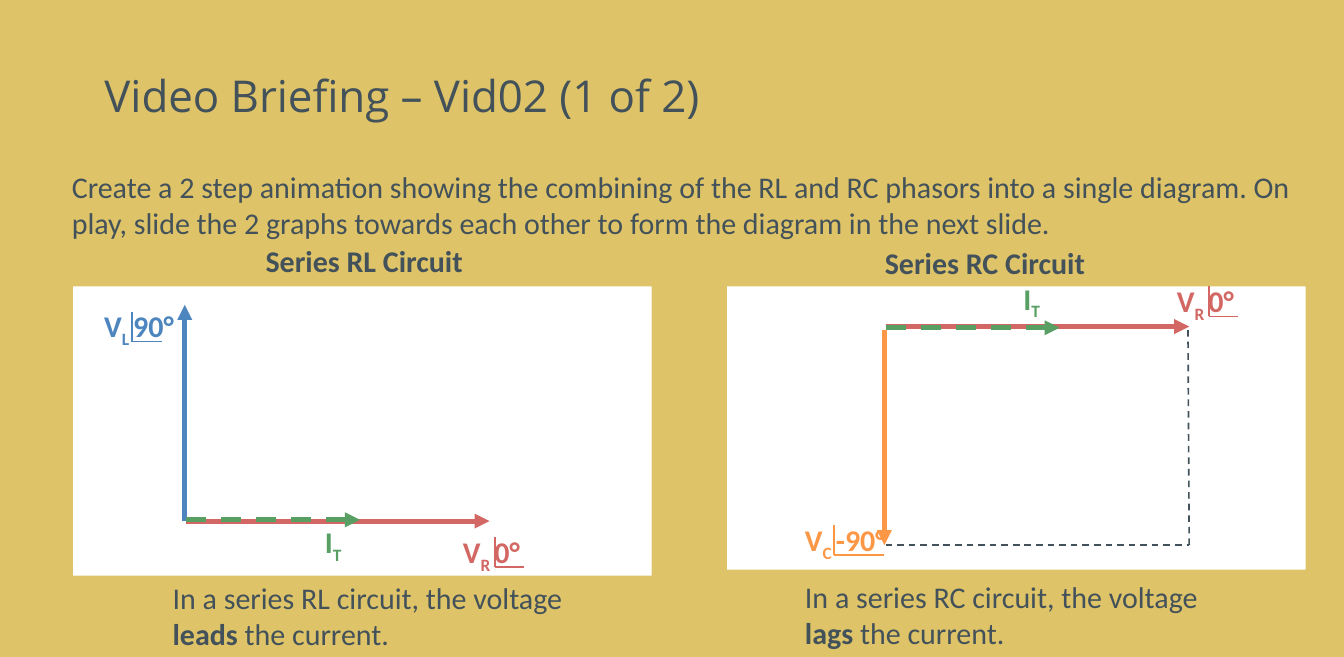
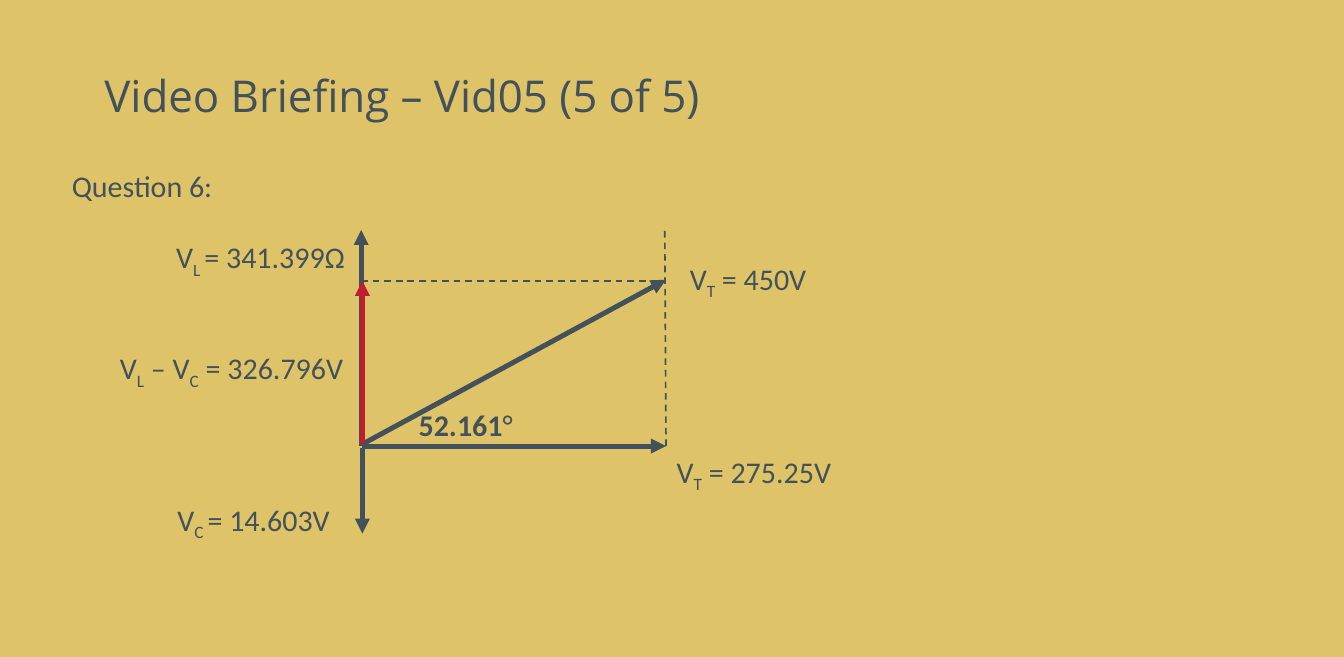
import pptx
import pptx.util
import pptx.dml.color
import pptx.enum.dml
import pptx.enum.shapes
import pptx.enum.text
import pptx.oxml
import pptx.oxml.ns

HUES = {
    "back": "DEC368", "ink": "43525A", "paper": "FFFFFF", "blue": "4D85BE",
    "red": "D26764", "green": "589F64", "orange": "FC9746", "crimson": "BE1E2D",
}
COLS, ROWS = 112, 54.72  # square cells of a tenth of an inch
TALL = 4  # rows taken by one line of text
BODY = "Calibri"
HEAD = "Open Sans"


def cell(n):
    """Length of n grid cells."""
    return pptx.util.Inches(n / 10)


def hue(name):
    return pptx.dml.color.RGBColor.from_string(HUES[name])


def tag(parent, name, **attrs):
    node = pptx.oxml.parse_xml(f"<a:{name} {pptx.oxml.ns.nsdecls('a')}/>")
    for key, val in attrs.items():
        node.set(key, val)
    parent.append(node)


class Pad:
    """A region of a slide; places are grid cells from its left top corner."""

    def __init__(self, slide, left, top):
        self.shapes, self.left, self.top = slide.shapes, left, top

    def spot(self, x, y):
        return cell(self.left + x), cell(self.top + y)

    def line(self, start, end, color="ink", size=1, dash=False, head=False):
        link = self.shapes.add_connector(
            pptx.enum.shapes.MSO_CONNECTOR.STRAIGHT,
            *self.spot(*start), *self.spot(*end))
        link.line.color.rgb = hue(color)
        link.line.width = pptx.util.Pt(size)
        if dash:
            link.line.dash_style = pptx.enum.dml.MSO_LINE.DASH
        if head:
            tag(link.line._get_or_add_ln(), "tailEnd", type="triangle")
        tag(link._element.spPr, "effectLst")

    def arrow(self, start, end, color="ink", dash=False):
        self.line(start, end, color, 3, dash, True)

    def text(self, x, y, wide, runs, color="ink", tall=TALL, wrap=False):
        """Runs are (words, style): b is bold, s is subscript."""
        frame = self.shapes.add_textbox(
            *self.spot(x, y), cell(wide), cell(tall)).text_frame
        frame.word_wrap = wrap
        frame.auto_size = pptx.enum.text.MSO_AUTO_SIZE.SHAPE_TO_FIT_TEXT
        for words, style in runs:
            run = frame.paragraphs[0].add_run()
            run.text = words
            run.font.name = BODY
            run.font.size = pptx.util.Pt(18)
            run.font.bold = "b" in style
            run.font.color.rgb = hue(color)
            if "s" in style:
                run._r.get_or_add_rPr().set("baseline", "-25000")

    def angle(self, x, y, wide, sub, turn, color, mark):
        """Polar label: mark is the offset and length of its angle sign."""
        self.text(x, y, wide,
                  [("V", "b"), (sub + " ", "bs"), (turn, "b")], color)
        left, size = x + mark[0], mark[1]
        top, low = y + 0.8, y + 3.3
        self.line((left, top), (left, low), color)
        self.line((left, low), (left + size, low), color)


def page(deck, title, lead, tall=TALL):
    slide = deck.slides.add_slide(deck.slide_layouts[5])
    box = slide.shapes.title
    box.left, box.top = cell(7.7), cell(2.9)
    box.width, box.height = cell(96.6), cell(10.6)
    frame = box.text_frame
    frame.auto_size = pptx.enum.text.MSO_AUTO_SIZE.NONE
    frame.vertical_anchor = pptx.enum.text.MSO_ANCHOR.MIDDLE
    para = frame.paragraphs[0]
    para.alignment = pptx.enum.text.PP_ALIGN.LEFT
    para.line_spacing = 0.9
    run = para.add_run()
    run.text = title
    run.font.name = HEAD
    run.font.size = pptx.util.Pt(26.3)
    run.font.color.rgb = hue("ink")
    Pad(slide, 0, 0).text(5, 13.5, 105.5, [(lead, "")], tall=tall, wrap=True)
    return slide


def panel(slide, box, zero, rise, gap, lean, color, volt, drop, amp,
          frame=False):
    """Phasor graph in a white box, with its axes crossing at zero.

    The voltage starts gap below zero, the current runs lean below it.
    """
    pad = Pad(slide, *box[:2])
    card = slide.shapes.add_shape(
        pptx.enum.shapes.MSO_SHAPE.RECTANGLE,
        *pad.spot(0, 0), cell(box[2]), cell(box[3]))
    card.shadow.inherit = False
    card.fill.solid()
    card.fill.fore_color.rgb = hue("paper")
    card.line.fill.background()
    x, y = zero
    far, tip = x + 25.3, y + rise
    pad.arrow((x - 0.1, y + gap), (x - 0.1, tip), color)
    pad.arrow((x, y), (far, y), "red")
    if frame:
        pad.line((x, tip), (far, tip), dash=True)
        pad.line((far, tip), (far - 0.1, y + gap), dash=True)
    pad.angle(*volt[:5], color, volt[5])
    pad.angle(*drop, 7, "R", "0°", "red", (3.65, 2.4))
    pad.arrow((x, y + lean), (x + 14.5, y + lean), "green", True)
    pad.text(*amp, 3.9, [("I", "b"), ("T", "bs")], "green")


def pair(deck):
    """Slide with the two circuits side by side."""
    slide = page(deck, "Video Briefing – Vid02 (1 of 2)",
                 "Create a 2 step animation showing the combining of the RL "
                 "and RC phasors into a single diagram. On play, slide the 2 "
                 "graphs towards each other to form the diagram in the next "
                 "slide.", 7.1)
    panel(slide, (6.1, 23.85, 48.2, 24.1), (9.4, 19.55), -18, 0, -0.1, "blue",
          (1.6, 1.3, 8, "L", "90°", (3.3, 2.5)), (31.5, 20.1), (20, 19.3))
    panel(slide, (60.6, 23.85, 48.2, 23.6), (13.2, 3.35), 18.2, 0.3, 0.1,
          "orange", (5.5, 19.1, 8.9, "C", "-90°", (3.4, 4.2)), (36.5, -0.8),
          (23.7, -1), True)
    pad = Pad(slide, 0, 0)
    for kind, verb, name, note in (
            ("RL", "leads", (21.15, 19.7, 18.6), (13.4, 47.75)),
            ("RC", "lags", (72.75, 19.9, 18.8), (66.1, 47.65))):
        pad.text(*name, [(f"Series {kind} Circuit", "b")])
        pad.text(*note, 35.2,
                 [(f"In a series {kind} circuit, the voltage ", ""),
                  (verb, "b"), (" the current.", "")], tall=7.1, wrap=True)


def total(deck):
    """Slide with the summed phasor and its angle."""
    slide = page(deck, "Video Briefing – Vid05 (5 of 5)", "Question 6:")
    pad = Pad(slide, 30.1, 19.15)
    far, base, peak = 25.4, 18, 4.25
    pad.arrow((0, base), (0, 0))
    pad.arrow((0.1, base), (far, base))
    pad.line((0, peak), (far, peak), dash=True)
    pad.line((far, base), (far - 0.1, 0), dash=True)
    pad.arrow((0, base - 0.1), (far, peak - 0.1))
    pad.arrow((0.1, base + 0.2), (0.1, base + 7.3))
    pad.arrow((0.1, base - 0.2), (0.1, peak), "crimson")
    for x, y, wide, runs in (
            (25.3, 18.1, 15.2, [("V", ""), ("T", "s"), (" = 275.25V", "")]),
            (-16.4, 0.25, 16.4, [("V", ""), ("L ", "s"), ("= 341.399Ω", "")]),
            (26.4, 2.05, 12, [("V", ""), ("T", "s"), (" = 450V", "")]),
            (3.8, 14.25, 9.9, [("52.161", "b"), ("°", "")]),
            (-16.3, 22.1, 15, [("V", ""), ("C ", "s"), ("= 14.603V", "")]),
            (-21.1, 9.5, 21.1, [("V", ""), ("L", "s"), (" – V", ""),
                                ("C", "s"), (" = 326.796V", "")])):
        pad.text(x, y, wide, runs)


def main():
    deck = pptx.Presentation()
    deck.slide_width, deck.slide_height = cell(COLS), cell(ROWS)
    fill = deck.slide_master.background.fill
    fill.solid()
    fill.fore_color.rgb = hue("back")
    pair(deck)
    total(deck)
    deck.save("out.pptx")


if __name__ == "__main__":
    main()
